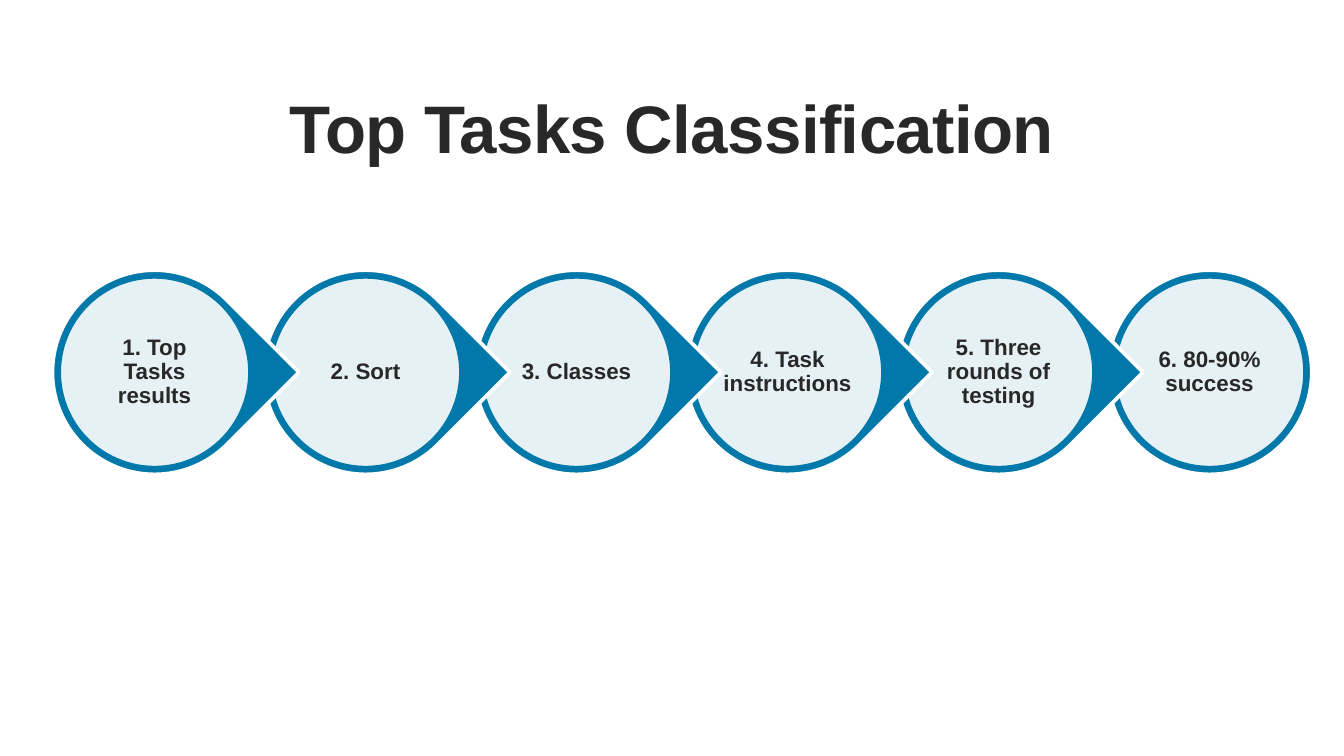
from lxml.etree import SubElement
from pptx import Presentation
from pptx.dml.color import RGBColor
from pptx.enum.shapes import MSO_SHAPE as Shape
from pptx.enum.text import MSO_ANCHOR as Anchor, PP_ALIGN as Align
from pptx.oxml.ns import qn
from pptx.util import Inches, Pt

TITLE = "Top Tasks Classification"
STEPS = [
    "1. Top Tasks results",
    "2. Sort",
    "3. Classes",
    "4. Task instructions",
    "5. Three rounds of testing",
    "6. 80-90% success",
]

BLUE = RGBColor(0x00, 0x78, 0xA9)
WHITE = RGBColor(0xFF, 0xFF, 0xFF)
INK = RGBColor(0x28, 0x28, 0x28)

WIDTH = 10
HEIGHT = WIDTH * 9 / 16
FIRST_CENTER, PITCH = 1.15, 1.57
MIDDLE = 2.77
OUTER, INNER, LABEL = 1.52, 1.42, 1.01


def square(center, size):
    """Left, top, width and height of a square centred on the row of steps."""
    return [Inches(v) for v in (center - size / 2, MIDDLE - size / 2, size, size)]


def add_disc(page, kind, center, size, fill, line):
    disc = page.shapes.add_shape(kind, *square(center, size))
    disc.shadow.inherit = False
    disc.fill.solid()
    disc.fill.fore_color.rgb = fill
    disc.line.color.rgb = line
    disc.line.width = Pt(2)
    return disc


def set_opacity(shape, percent):
    color = shape.fill._xPr.find(qn("a:solidFill"))[0]
    SubElement(color, qn("a:alpha")).set("val", str(percent * 1000))


def add_text(page, place, text, size, anchor, inset):
    box = page.shapes.add_textbox(*place)
    frame = box.text_frame
    frame.word_wrap = True
    frame.vertical_anchor = anchor
    frame.margin_left = frame.margin_right = Inches(inset)
    frame.margin_top = frame.margin_bottom = Inches(inset)
    para = frame.paragraphs[0]
    para.alignment = Align.CENTER
    para.line_spacing = 0.9
    span = para.add_run()
    span.text = text
    span.font.name = "Arial"
    span.font.size = Pt(size)
    span.font.bold = True
    span.font.color.rgb = INK
    return span


def add_step(page, index, text):
    center = FIRST_CENTER + index * PITCH
    is_last = index == len(STEPS) - 1
    kind = Shape.OVAL if is_last else Shape.TEAR
    pointer = add_disc(page, kind, center, OUTER, BLUE, WHITE)
    if not is_last:
        pointer.adjustments[0] = 1
        pointer.rotation = 45
    disc = add_disc(page, Shape.OVAL, center, INNER, WHITE, BLUE)
    set_opacity(disc, 90)
    add_text(page, square(center, LABEL), text, 12, Anchor.MIDDLE, 0.02)


def main():
    deck = Presentation()
    deck.slide_width, deck.slide_height = Inches(WIDTH), Inches(HEIGHT)
    page = deck.slides.add_slide(deck.slide_layouts[6])

    title_place = [Inches(v) for v in (0, 0.8, WIDTH, 0.45)]
    title = add_text(page, title_place, TITLE, 36, Anchor.BOTTOM, 0)
    title.font._element.set("spc", "-30")

    # Each pointer overlaps the next step, so the last step goes to the back.
    for index, text in reversed(list(enumerate(STEPS))):
        add_step(page, index, text)

    deck.save("out.pptx")


if __name__ == "__main__":
    main()
